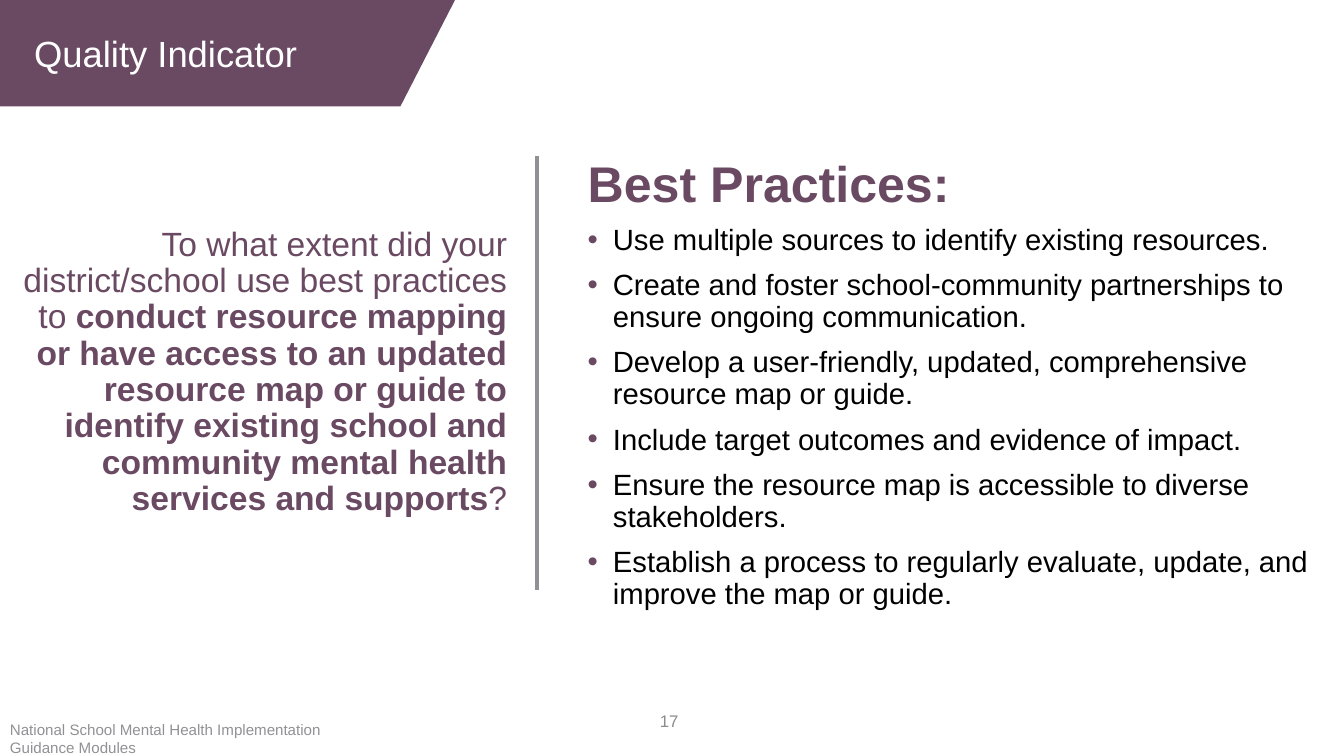
"""Build the quality indicator slide on resource mapping."""
from dataclasses import dataclass

from lxml import etree
from pptx import Presentation
from pptx import util as u
from pptx.dml.color import RGBColor
from pptx.enum import shapes, text
from pptx.oxml.ns import qn

HUES = {"plum": "6A4A62", "white": "FFFFFF", "black": "000000",
        "gray": "8C8C8C", "rule": "919195"}
LEFT, RIGHT = text.PP_ALIGN.LEFT, text.PP_ALIGN.RIGHT
TOP, MID = text.MSO_ANCHOR.TOP, text.MSO_ANCHOR.MIDDLE


@dataclass
class Box:
    """Hold the place of a shape in points."""
    left: float
    top: float
    width: float
    height: float


@dataclass
class Style:
    """Hold the look of a run of text."""
    size: float
    hue: str
    bold: bool = False


@dataclass
class Label:
    """Describe a small line of text."""
    words: str
    box: Box
    style: Style
    align: int = LEFT
    anchor: int = TOP


LABELS = [
    Label("17", Box(275.8, 500.4, 216, 28.8), Style(12, "gray"), RIGHT, MID),
    Label("Quality Indicator", Box(17.3, 18.7, 229, 38.9), Style(26, "white")),
    Label("National School Mental Health Implementation Guidance Modules",
          Box(0, 511.2, 274.3, 28.8), Style(10.8, "rule")),
]
ASK = [
    ("To what extent did your district/school use best practices to ", False),
    ("conduct resource mapping or have access to an updated resource map or "
     "guide to identify existing school and community mental health services "
     "and supports", True),
    ("?", False),
]
HEAD = "Best Practices:"
TIPS = [
    "Use multiple sources to identify existing resources.",
    "Create and foster school-community partnerships to ensure ongoing communication.",
    "Develop a user-friendly, updated, comprehensive resource map or guide.",
    "Include target outcomes and evidence of impact.",
    "Ensure the resource map is accessible to diverse stakeholders.",
    "Establish a process to regularly evaluate, update, and improve the map or guide.",
]


def color(hue: str) -> RGBColor:
    """Return the named color."""
    return RGBColor.from_string(HUES[hue])


def dress(run, style: Style) -> None:
    """Format one run."""
    font = run.font
    font.name, font.size, font.bold = "Arial", u.Pt(style.size), style.bold
    font.color.rgb = color(style.hue)


def place(shape, box: Box) -> None:
    """Move and size a shape."""
    shape.left, shape.top = u.Pt(box.left), u.Pt(box.top)
    shape.width, shape.height = u.Pt(box.width), u.Pt(box.height)


def setup(frame, anchor: int) -> None:
    """Make a frame wrap at a fixed size."""
    frame.word_wrap = True
    frame.auto_size = text.MSO_AUTO_SIZE.NONE
    frame.vertical_anchor = anchor


def bullet(para, mark: str = "") -> None:
    """Give a paragraph a plum bullet, or none."""
    props = para._p.get_or_add_pPr()
    indent = u.Pt(18) if mark else 0
    props.set("marL", str(indent))
    props.set("indent", str(-indent))
    if not mark:
        etree.SubElement(props, qn("a:buNone"))
        return
    tint = etree.SubElement(props, qn("a:buClr"))
    etree.SubElement(tint, qn("a:srgbClr"), val=HUES["plum"])
    etree.SubElement(props, qn("a:buFont"), typeface="Arial")
    etree.SubElement(props, qn("a:buChar"), char=mark)


def banner(slide) -> None:
    """Draw the slanted banner."""
    form = slide.shapes.build_freeform(0, 0, scale=u.Pt(1))
    form.add_line_segments([(324.7, 0), (285.8, 75.6), (0, 75.6)], close=True)
    shape = form.convert_to_shape()
    shape.shadow.inherit = False
    shape.fill.solid()
    shape.fill.fore_color.rgb = color("plum")
    shape.line.fill.background()


def label(slide, item: Label) -> None:
    """Draw one label."""
    shape = slide.shapes.add_textbox(0, 0, 0, 0)
    place(shape, item.box)
    frame = shape.text_frame
    setup(frame, item.anchor)
    frame.text = item.words
    para = frame.paragraphs[0]
    para.alignment = item.align
    dress(para.runs[0], item.style)


def query(shape) -> None:
    """Fill the title with the question."""
    place(shape, Box(-7.2, 72, 376.6, 388.1))
    setup(shape.text_frame, MID)
    para = shape.text_frame.paragraphs[0]
    para.alignment, para.line_spacing = RIGHT, 0.9
    for words, bold in ASK:
        run = para.add_run()
        run.text = words
        dress(run, Style(24, "plum", bold))


def advice(shape) -> None:
    """Fill the body with the list of practices."""
    place(shape, Box(412.6, 72, 529.2, 379.4))
    frame = shape.text_frame
    setup(frame, TOP)
    frame.margin_top = u.Pt(48.5)
    frame.text = "\n".join([HEAD, *TIPS])
    for rank, para in enumerate(frame.paragraphs):
        bullet(para, "•" if rank else "")
        para.line_spacing = 0.9 if rank else 0.7
        para.space_before = u.Pt(10 if rank else 0)
        dress(para.runs[0], Style(20.9, "black") if rank
              else Style(35.8, "plum", True))


def rule(slide) -> None:
    """Draw the upright line between the columns."""
    line = slide.shapes.add_connector(
        shapes.MSO_CONNECTOR.STRAIGHT,
        u.Pt(383.8), u.Pt(111.6), u.Pt(383.8), u.Pt(421.2))
    line.line.color.rgb = color("rule")
    line.line.width = u.Pt(3)
    etree.SubElement(line._element.spPr, qn("a:effectLst"))


def main() -> None:
    """Build and save the slide."""
    deck = Presentation()
    deck.slide_width, deck.slide_height = u.Pt(960), u.Pt(540)
    slide = deck.slides.add_slide(deck.slide_layouts[1])
    banner(slide)
    for item in LABELS:
        label(slide, item)
    query(slide.shapes.title)
    advice(slide.placeholders[1])
    rule(slide)
    deck.save("out.pptx")


if __name__ == "__main__":
    main()
